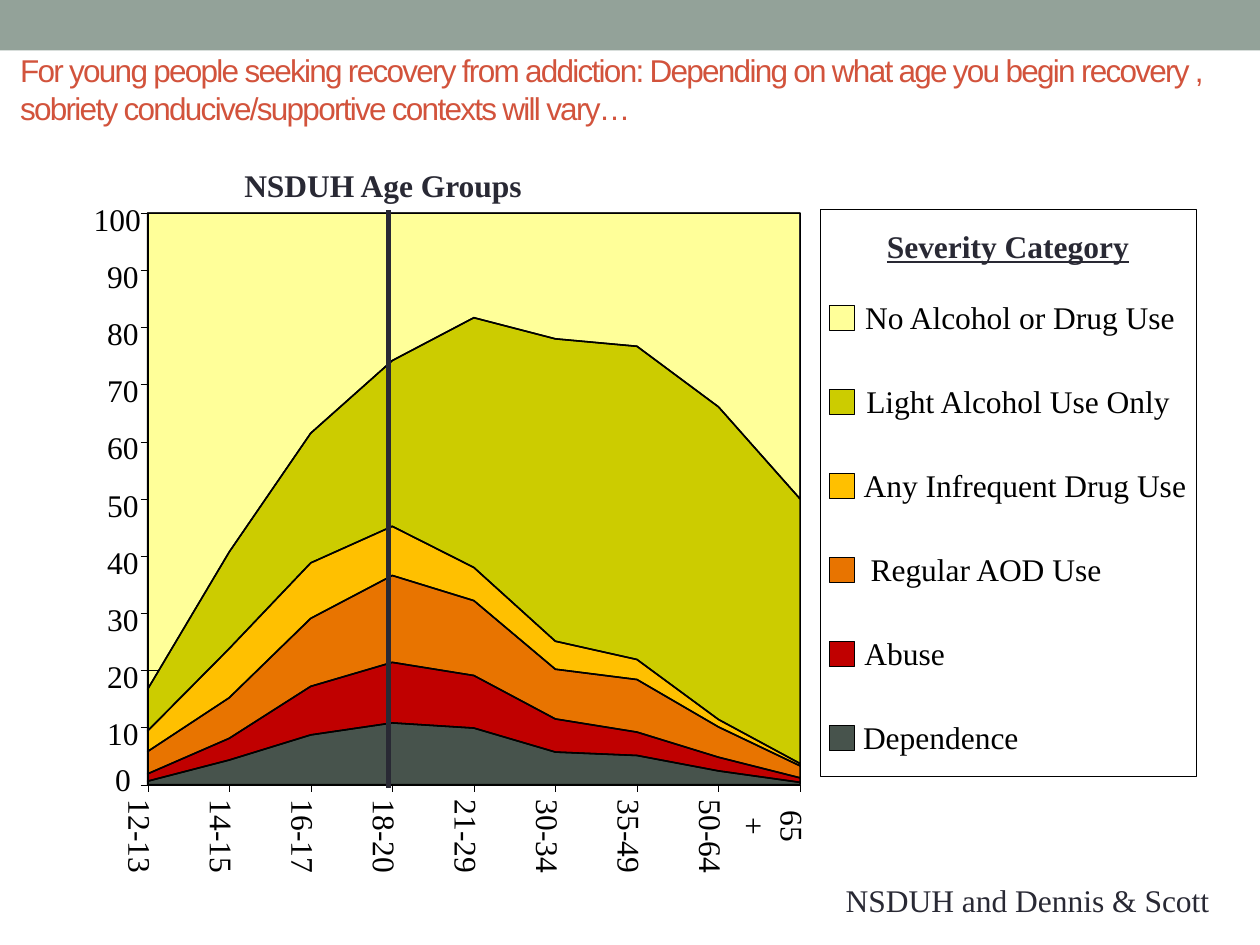
from dataclasses import dataclass

from lxml.etree import SubElement
from pptx import Presentation
from pptx.dml.color import RGBColor
from pptx.enum.shapes import MSO_CONNECTOR, MSO_SHAPE
from pptx.enum.text import MSO_ANCHOR, MSO_AUTO_SIZE, PP_ALIGN
from pptx.oxml.ns import qn
from pptx.util import Pt


@dataclass(frozen=True)
class Theme:
    bar: str = "93A299"
    title: str = "D2533C"
    ink: str = "292934"
    black: str = "000000"
    white: str = "FFFFFF"
    frame: str = "808080"
    size: float = 18
    sans: str = "Arial"
    serif: str = "Times New Roman"
    hairline: float = 0.1
    outline: float = 0.88
    marker: float = 3


@dataclass(frozen=True)
class Box:
    left: float
    top: float
    width: float
    height: float

    @property
    def right(self) -> float:
        return self.left + self.width

    @property
    def bottom(self) -> float:
        return self.top + self.height


@dataclass(frozen=True)
class Band:
    """A severity category; upper holds its cumulative percentage per age."""
    name: str
    color: str
    label_left: float
    label_width: float
    upper: tuple


THEME = Theme()
PLOT = Box(84.4, 121.8, 372.8, 326.6)
LINE_HEIGHT = 21.6
TICK = 4
AGES = ["12-13", "14-15", "16-17", "18-20", "21-29", "30-34", "35-49", "50-64", "65+"]
BANDS = [  # from the bottom of the stack to the top
    Band("Dependence", "47534C", 493, 89.3, (0.6, 4.3, 8.7, 10.8, 9.9, 5.7, 5.1, 2.4, 0.4)),
    Band("Abuse", "C00000", 493.9, 46.1, (1.9, 8.1, 17.2, 21.4, 19.1, 11.5, 9.2, 4.8, 1.2)),
    Band("Regular AOD Use", "E87400", 496.8, 133.4,
         (5.8, 15.2, 29.1, 36.6, 32.2, 20.2, 18.4, 10.1, 3.3)),
    Band("Any Infrequent Drug Use", "FFC000", 492.7, 186,
         (9.4, 23.8, 38.8, 45.2, 38, 25.1, 21.9, 11.4, 3.7)),
    Band("Light Alcohol Use Only", "CCCC00", 494.6, 174.4,
         (16.7, 40.7, 61.5, 74.2, 81.7, 78, 76.7, 66.1, 50)),
    Band("No Alcohol or Drug Use", "FFFF99", 493.9, 178, (100,) * len(AGES)),
]


def age_x(index: int) -> float:
    return PLOT.left + index * PLOT.width / (len(AGES) - 1)


def percent_y(percent: float) -> float:
    return PLOT.bottom - percent / 100 * PLOT.height


def paint(shape, fill=None, line=None, weight=THEME.outline) -> None:
    shape.shadow.inherit = False
    if fill:
        shape.fill.solid()
        shape.fill.fore_color.rgb = RGBColor.from_string(fill)
    else:
        shape.fill.background()
    if line:
        shape.line.color.rgb = RGBColor.from_string(line)
        shape.line.width = Pt(weight)
    else:
        shape.line.fill.background()


def add_rectangle(slide, box: Box, **style) -> None:
    shape = slide.shapes.add_shape(
        MSO_SHAPE.RECTANGLE, Pt(box.left), Pt(box.top), Pt(box.width), Pt(box.height))
    paint(shape, **style)


def add_line(slide, x1: float, y1: float, x2: float, y2: float,
             color=THEME.black, weight=THEME.hairline) -> None:
    line = slide.shapes.add_connector(
        MSO_CONNECTOR.STRAIGHT, Pt(x1), Pt(y1), Pt(x2), Pt(y2))
    line.line.color.rgb = RGBColor.from_string(color)
    line.line.width = Pt(weight)
    SubElement(line._element.spPr, qn("a:effectLst"))


def write(text_frame, text: str, font=THEME.serif, color=THEME.black, align=PP_ALIGN.CENTER,
          bold=False, underline=False):
    paragraph = text_frame.paragraphs[0]
    paragraph.alignment = align
    run = paragraph.add_run()
    run.text = text
    run.font.name = font
    run.font.size = Pt(THEME.size)
    run.font.bold = bold
    run.font.underline = underline
    run.font.color.rgb = RGBColor.from_string(color)
    return run


def add_label(slide, text: str, box: Box, rotation=0, wrap=False, inset=False, **style) -> None:
    shape = slide.shapes.add_textbox(
        Pt(box.left), Pt(box.top), Pt(box.width), Pt(box.height))
    shape.rotation = rotation
    frame = shape.text_frame
    frame.word_wrap = wrap
    frame.auto_size = MSO_AUTO_SIZE.NONE if rotation and wrap else MSO_AUTO_SIZE.SHAPE_TO_FIT_TEXT
    if not inset:
        frame.margin_left = frame.margin_right = frame.margin_top = frame.margin_bottom = 0
    write(frame, text, **style)


def add_band(slide, lower: tuple, upper: tuple, closed: bool, **style) -> None:
    top = [(age_x(i), percent_y(value)) for i, value in enumerate(upper)]
    base = [(age_x(i), percent_y(value)) for i, value in enumerate(lower)]
    points = [base[0], *top, *reversed(base)]
    start, *rest = [(Pt(x), Pt(y)) for x, y in points]
    builder = slide.shapes.build_freeform(*start)
    builder.add_line_segments(rest, close=closed)
    paint(builder.convert_to_shape(), **style)


def add_title(slide) -> None:
    title = slide.shapes.title
    title.left, title.top, title.width, title.height = Pt(4.3), Pt(29.8), Pt(720), Pt(41.8)
    title.text_frame.vertical_anchor = MSO_ANCHOR.MIDDLE
    title.text_frame.auto_size = MSO_AUTO_SIZE.NONE
    run = write(title.text_frame,
                "For young people seeking recovery from addiction: Depending on what age you "
                "begin recovery , sobriety conducive/supportive contexts will vary…",
                font=THEME.sans, color=THEME.title, align=PP_ALIGN.LEFT)
    run.font._element.set("spc", "-100")


def add_areas(slide) -> None:
    add_rectangle(slide, PLOT, fill=BANDS[-1].color)
    for percent in (10, 20, 100):
        add_line(slide, PLOT.left, percent_y(percent), PLOT.right, percent_y(percent))
    add_rectangle(slide, PLOT, line=THEME.frame)
    lowers = [(0,) * len(AGES)] + [band.upper for band in BANDS[:-1]]
    stack = list(zip(lowers, BANDS))
    for lower, band in stack[:-1]:
        add_band(slide, lower, band.upper, closed=True, fill=band.color)
    for lower, band in stack:
        add_band(slide, lower, band.upper, closed=False, line=THEME.black)


def add_axes(slide) -> None:
    # Percentage axis
    add_line(slide, PLOT.left, PLOT.top, PLOT.left, PLOT.bottom)
    for percent in range(0, 101, 10):
        y = percent_y(percent)
        add_line(slide, PLOT.left - TICK, y, PLOT.left, y)
        width = 9 * len(str(percent)) + 0.2
        center = 67 if percent == 100 else 70.3
        rise = 14.3 if percent == 0 else 7.6
        add_label(slide, str(percent), Box(center - width / 2, y - rise, width, LINE_HEIGHT))
    # Age axis
    add_line(slide, PLOT.left, PLOT.bottom, PLOT.right, PLOT.bottom)
    for index, age in enumerate(AGES):
        x = age_x(index)
        add_line(slide, x, PLOT.bottom + TICK, x, PLOT.bottom)
        last = index == len(AGES) - 1
        width, center_y = (28, 472.3) if last else (43, 478.1)
        box = Box(x - 3.9 - width / 2, center_y - LINE_HEIGHT / 2, width, LINE_HEIGHT)
        add_label(slide, age, box, rotation=90, wrap=last)


def add_legend(slide) -> None:
    add_rectangle(slide, Box(468.7, 119.8, 215, 324), fill=THEME.white,
                  line=THEME.black, weight=THEME.hairline)
    for row, band in enumerate(reversed(BANDS)):
        top = 174.6 + 48 * row
        add_rectangle(slide, Box(473.9, top, 14.4, 14.4), fill=band.color, line=THEME.black)
        add_label(slide, band.name, Box(band.label_left, top - 4.3, band.label_width, LINE_HEIGHT))


def main() -> None:
    presentation = Presentation()
    presentation.slide_width, presentation.slide_height = Pt(720), Pt(540)
    slide = presentation.slides.add_slide(presentation.slide_layouts[5])
    add_rectangle(slide, Box(0, 0, 720, 28.8), fill=THEME.bar)
    add_title(slide)
    add_label(slide, "NSDUH and Dennis & Scott", Box(482.1, 503.3, 210.2, LINE_HEIGHT),
              color=THEME.ink)
    add_areas(slide)
    add_axes(slide)
    add_legend(slide)
    # Marker at ages 18-20, then the two headings
    add_line(slide, 222, 450, 222, 120, color=THEME.ink, weight=THEME.marker)
    heading = dict(wrap=True, inset=True, color=THEME.ink, bold=True)
    add_label(slide, "NSDUH Age Groups", Box(126, 91.4, 185.8, 28.8), **heading)
    add_label(slide, "Severity Category", Box(474.1, 126, 203.8, 28.8), underline=True, **heading)
    presentation.save("out.pptx")


if __name__ == "__main__":
    main()
